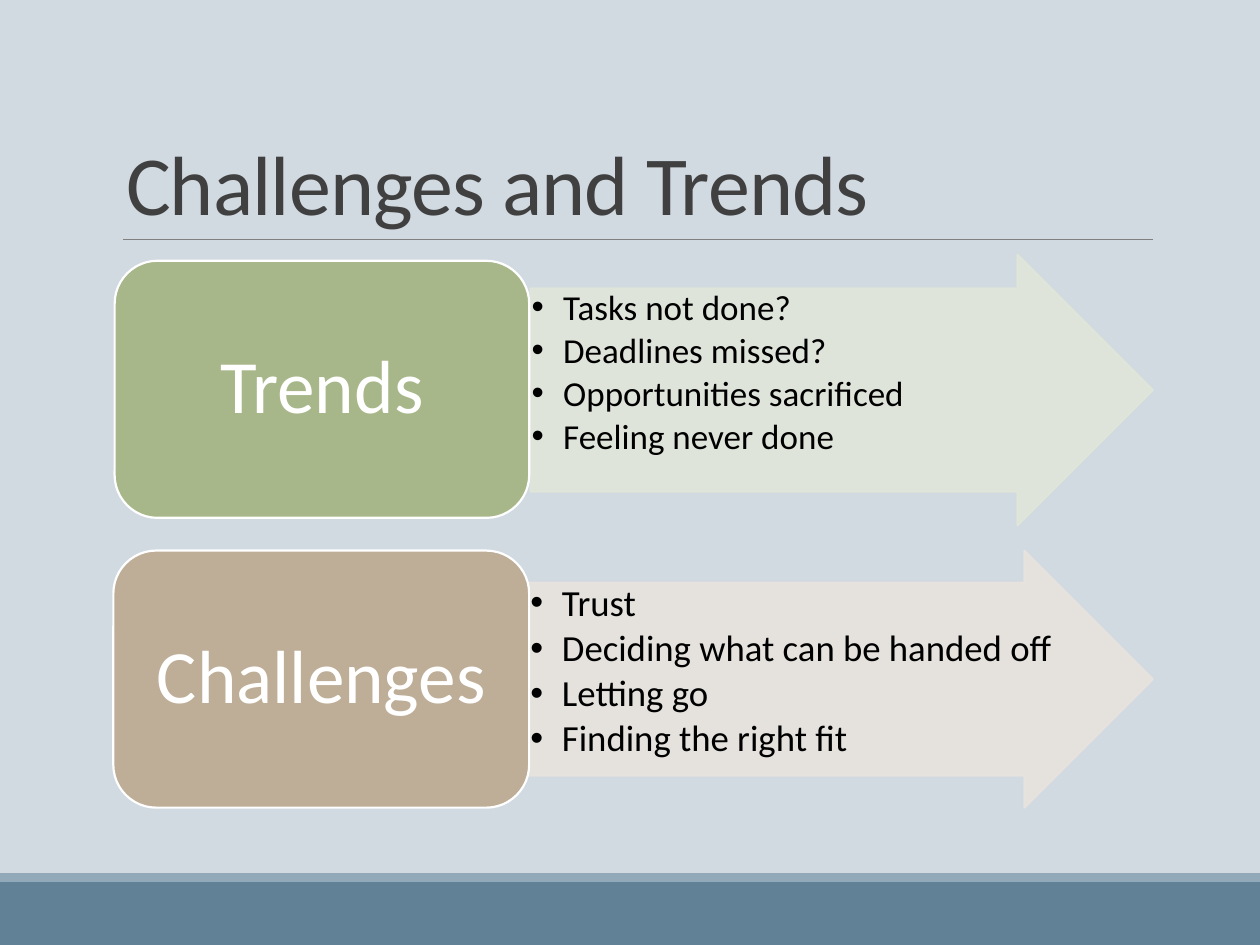
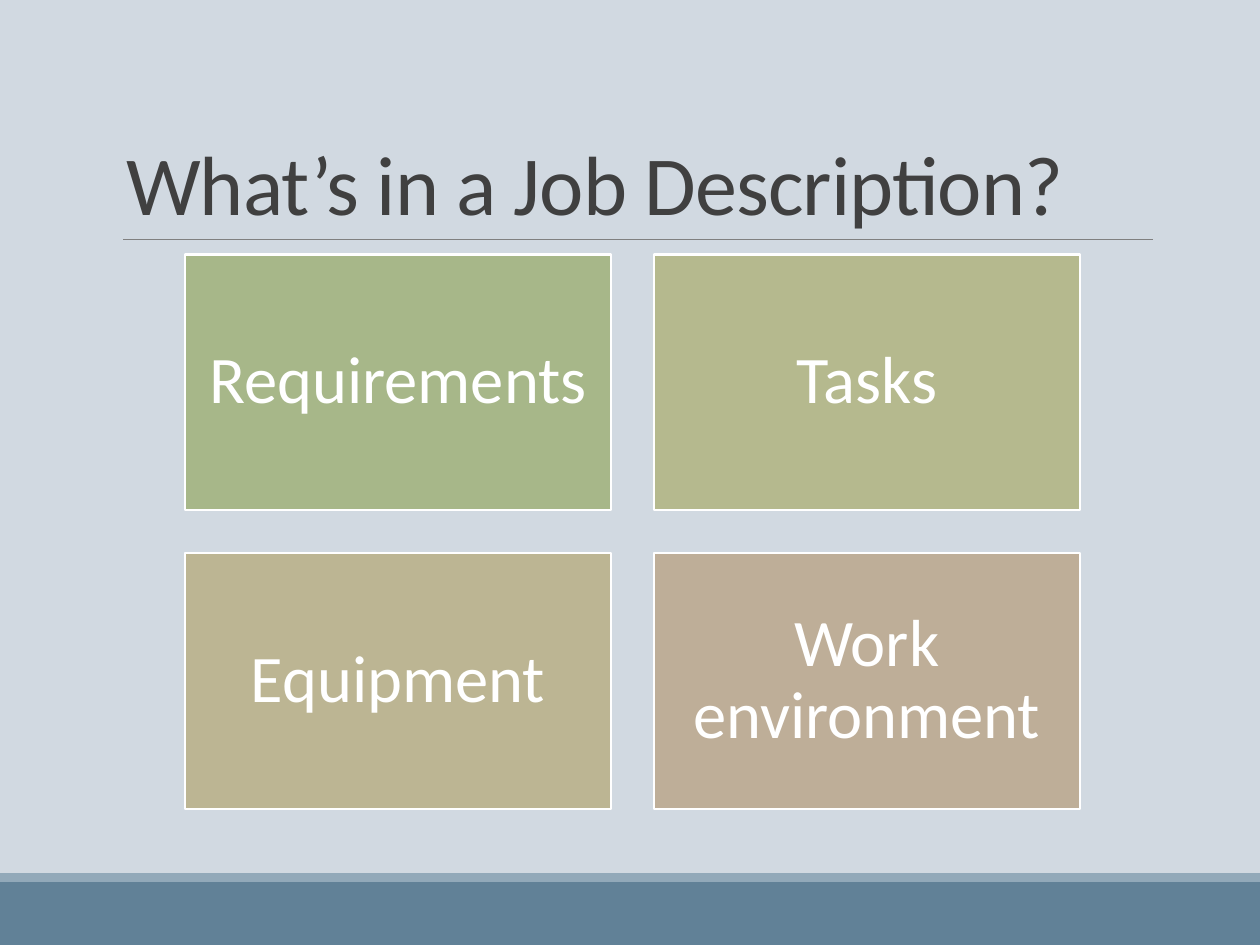
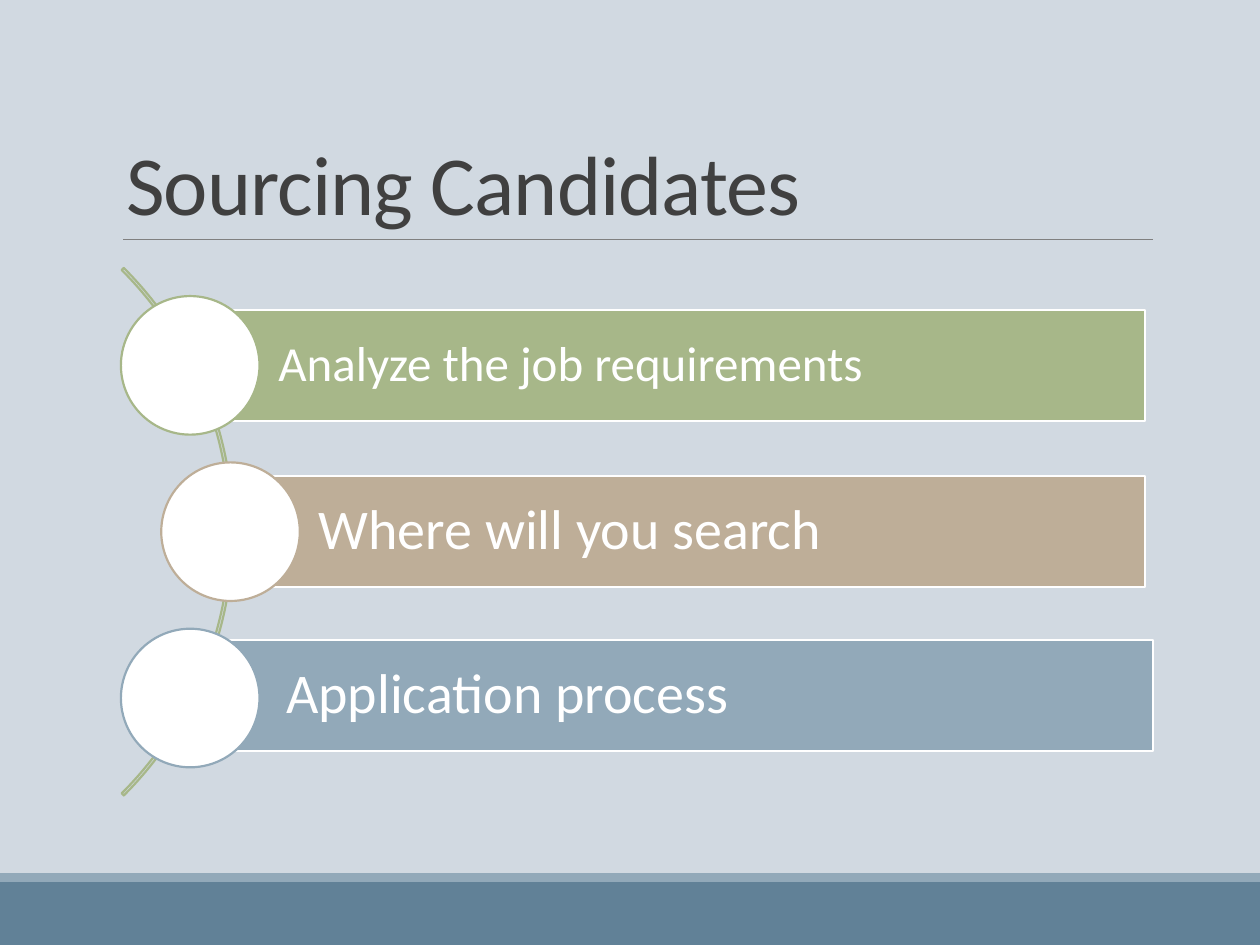
import pptx
import pptx.util
import pptx.dml.color
import pptx.enum.shapes
import pptx.enum.text
import pptx.oxml
import pptx.oxml.ns
import lxml.etree

Inches = pptx.util.Inches
Pt = pptx.util.Pt
RGB = pptx.dml.color.RGBColor
KIND = pptx.enum.shapes.MSO_SHAPE
ALIGN = pptx.enum.text.PP_ALIGN
ANCHOR = pptx.enum.text.MSO_ANCHOR
qn = pptx.oxml.ns.qn

PALE = RGB(0xD1, 0xD9, 0xE1)
STEEL = RGB(0x61, 0x81, 0x97)
BLUE = RGB(0x92, 0xA9, 0xB9)
GRAY = RGB(0x80, 0x80, 0x80)
DARK = RGB(0x40, 0x40, 0x40)
BLACK = RGB(0, 0, 0)
WHITE = RGB(0xFF, 0xFF, 0xFF)
GREEN = RGB(0xA7, 0xB7, 0x89)
OLIVE = RGB(0xB5, 0xB9, 0x8E)
SAND = RGB(0xBC, 0xB5, 0x93)
TAN = RGB(0xBE, 0xAE, 0x98)
MINT = RGB(0xE1, 0xE6, 0xDA)
CREAM = RGB(0xE8, 0xE3, 0xDD)
FONT = "Calibri"

TITLE_BOX = (0.9, 0.31, 8.25, 1.59)
BANDS = [((0, 7, 10, 0.5), STEEL), ((0, 6.93, 10, 0.07), BLUE)]

TOPICS = [
    dict(name="Trends", color=GREEN, box=(0.91, 2.07, 3.29, 2.04),
         tint=MINT, arrow=(4.21, 2.02, 4.94, 2.15),
         area=(4.21, 2.29, 4.13, 1.61), size=20,
         points=["Tasks not done?", "Deadlines missed?",
                 "Opportunities sacrificed", "Feeling never done"]),
    dict(name="Challenges", color=TAN, box=(0.9, 4.37, 3.3, 2.04),
         tint=CREAM, arrow=(4.2, 4.37, 4.95, 2.04),
         area=(4.2, 4.63, 4.18, 1.53), size=21,
         points=["Trust", "Deciding what can be handed off",
                 "Letting go", "Finding the right fit"]),
]

PARTS = [("Requirements", GREEN), ("Tasks", OLIVE),
         ("Equipment", SAND), ("Work environment", TAN)]

STEPS = [
    ("Analyze the job requirements", GREEN, 28, (1.51, 2.46, 7.58, 0.88), 0.96),
    ("Where will you search", TAN, 32, (1.83, 3.78, 7.26, 0.88), 1.28),
    ("Application process", BLUE, 32, (1.57, 5.08, 7.58, 0.88), 0.96),
]


def place(shape, box):
    shape.left, shape.top, shape.width, shape.height = map(Inches, box)


def draw(slide, kind, box, fill=None, line=None, adjust=()):
    shape = slide.shapes.add_shape(kind, *map(Inches, box))
    shape.shadow.inherit = False
    if fill is None:
        shape.fill.background()
    else:
        shape.fill.solid()
        shape.fill.fore_color.rgb = fill
    if line is None:
        shape.line.fill.background()
    else:
        shape.line.color.rgb = line
        shape.line.width = Pt(1.25)
    for i, value in enumerate(adjust):
        shape.adjustments[i] = value
    return shape


def write(shape, lines, size, color, align, anchor, pads, spacing=0.9):
    frame = shape.text_frame
    frame.text = "\n".join(lines)
    frame.word_wrap = True
    frame.auto_size = pptx.enum.text.MSO_AUTO_SIZE.NONE
    frame.vertical_anchor = anchor
    (frame.margin_left, frame.margin_top,
     frame.margin_right, frame.margin_bottom) = map(Inches, pads)
    for para in frame.paragraphs:
        para.alignment = align
        para.line_spacing = spacing
        para.space_before = Pt(0)
        for run in para.runs:
            run.font.name = FONT
            run.font.size = Pt(size)
            run.font.color.rgb = color


def fade(shape):
    for color in shape.element.spPr.iter(qn("a:srgbClr")):
        lxml.etree.SubElement(color, qn("a:alpha")).set("val", "90000")


def start(deck, layout, title):
    slide = deck.slides.add_slide(deck.slide_layouts[layout])
    head = slide.shapes.title
    place(head, TITLE_BOX)
    write(head, [title], 48, DARK, ALIGN.LEFT, ANCHOR.BOTTOM,
          (0.1, 0.05, 0.1, 0.05), 0.85)
    for run in head.text_frame.paragraphs[0].runs:
        run.font.element.set("spc", "-50") if hasattr(run.font, "element") else \
            run.text and head.element.find(".//" + qn("a:rPr")).set("spc", "-50")
    return slide


def brand(deck, slide):
    master = deck.slide_master
    master.background.fill.solid()
    master.background.fill.fore_color.rgb = PALE
    marks = [draw(slide, KIND.RECTANGLE, box, fill) for box, fill in BANDS]
    rule = slide.shapes.add_connector(
        pptx.enum.shapes.MSO_CONNECTOR.STRAIGHT,
        *map(Inches, (0.98, 1.9, 9.15, 1.9)))
    rule.line.color.rgb = GRAY
    rule.line.width = Pt(0.5)
    lxml.etree.SubElement(rule.element.spPr, qn("a:effectLst"))
    tree = master.element.cSld.spTree
    for i, mark in enumerate(marks + [rule]):
        mark.element.find(".//" + qn("p:cNvPr")).set("id", str(20 + i))
        tree.insert(2 + i, mark.element)


def topics(slide):
    lists = list(slide.placeholders)[1:]
    for topic, body in zip(TOPICS, lists):
        tint = topic["tint"]
        fade(draw(slide, KIND.RIGHT_ARROW, topic["arrow"], tint, tint, (0.75, 0.5)))
        place(body, topic["area"])
        write(body, topic["points"], topic["size"], BLACK, ALIGN.LEFT,
              ANCHOR.TOP, (0.01,) * 4)
        for para in body.text_frame.paragraphs:
            para.space_after = Pt(topic["size"] * 0.15)
        for props in body.element.iter(qn("a:pPr")):
            props.set("marL", str(Inches(0.25)))
            props.set("indent", str(-Inches(0.25)))
        slide.shapes.element.append(body.element) if hasattr(slide.shapes, "element") \
            else slide.element.cSld.spTree.append(body.element)
        card = draw(slide, KIND.ROUNDED_RECTANGLE, topic["box"], topic["color"], WHITE)
        write(card, [topic["name"]], 43, WHITE, ALIGN.CENTER, ANCHOR.MIDDLE,
              (0.18, 0.09, 0.18, 0.09))


def grid(slide):
    wide, high = 3.38, 2.03
    for i, (name, color) in enumerate(PARTS):
        row, col = divmod(i, 2)
        box = (1.47 + col * 3.72, 2.02 + row * 2.37, wide, high)
        card = draw(slide, KIND.RECTANGLE, box, color, WHITE)
        write(card, [name], 38, WHITE, ALIGN.CENTER, ANCHOR.MIDDLE, (0.16,) * 4)


def steps(slide):
    draw(slide, KIND.BLOCK_ARC, (-4.07, 1.26, 5.92, 5.92), None, GREEN,
         (189, 27, 0.004))
    for i, (name, color, size, box, left) in enumerate(STEPS):
        bar = draw(slide, KIND.RECTANGLE, box, color, WHITE)
        write(bar, [name], size, WHITE, ALIGN.LEFT, ANCHOR.MIDDLE,
              (0.7, 0.09, 0.09, 0.09))
        draw(slide, KIND.OVAL, (left, 2.35 + i * 1.32, 1.1, 1.1), WHITE, color)


def main():
    deck = pptx.Presentation()
    deck.slide_width, deck.slide_height = Inches(10), Inches(7.5)
    first = start(deck, 3, "Challenges and Trends")
    brand(deck, first)
    topics(first)
    grid(start(deck, 5, "What’s in a Job Description?"))
    steps(start(deck, 5, "Sourcing Candidates"))
    deck.save("out.pptx")


if __name__ == "__main__":
    main()
